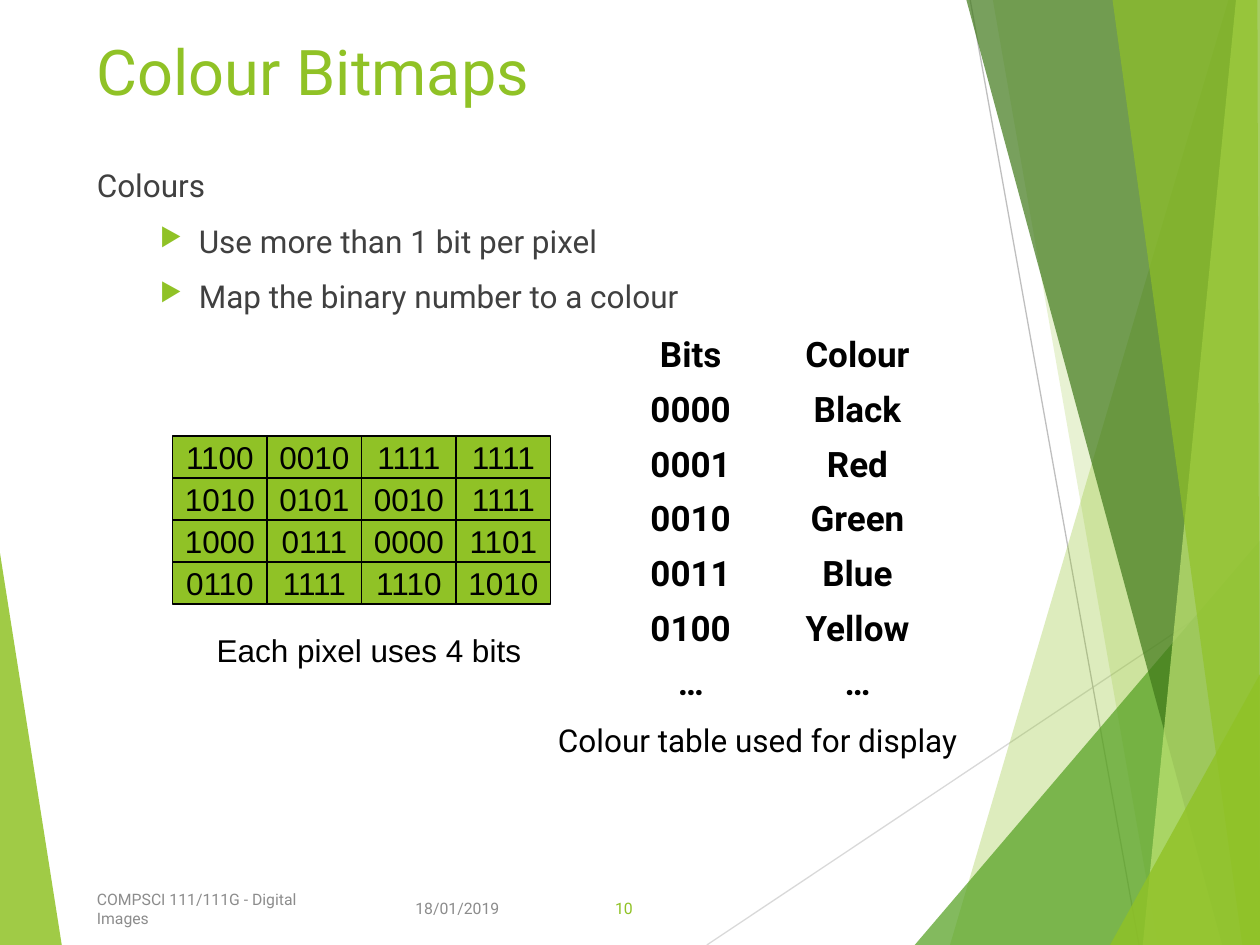
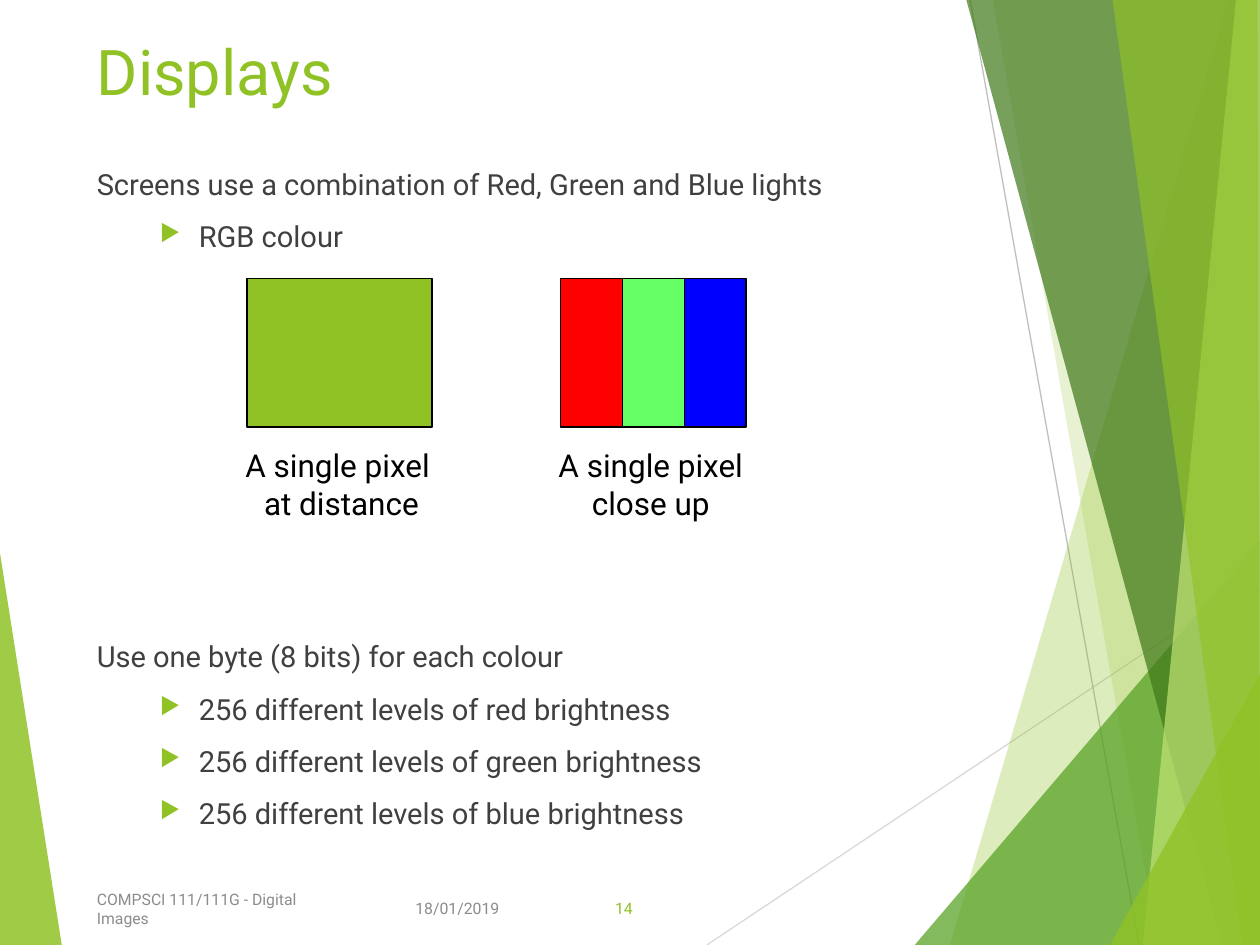
from lxml import etree
from pptx import Presentation
from pptx import util as u
from pptx.dml import color
from pptx.enum import shapes, text
from pptx.oxml import ns

COLUMNS, ROWS = 100, 75
CELL = u.Inches(0.1)

COLORS = {
    "lime": "90C226", "green": "54A021", "forest": "3F7819", "pale": "C0E474",
    "silver": "D9D9D9", "gray": "BFBFBF", "footer": "8C8C8C", "body": "404040",
    "black": "000000", "red": "FF0000", "light green": "66FF66", "blue": "0000FF",
}

# Background facets: colour, opacity in percent, corners as (column, row)
LEFT_FACET = ("lime", 85, [(0, 43.9), (4.9, 75), (0, 75)])
RIGHT_FACETS = [
    ("lime", 30, [(97.5, 0), (75.4, 75), (100, 75), (100, 0)]),
    ("lime", 20, [(78.8, 0), (91.9, 75), (100, 75), (100, 0)]),
    ("green", 72, [(72.6, 75), (100, 42.9), (100, 75)]),
    ("forest", 70, [(76.7, 0), (97, 75), (100, 75), (100, 0)]),
    ("pale", 70, [(98.1, 0), (90.7, 75), (100, 75), (100, 0)]),
    ("lime", 65, [(88.3, 0), (98.6, 75), (100, 75), (99.8, 0)]),
    ("lime", 80, [(88.1, 75), (100, 53.5), (100, 75)]),
]
RAYS = [("silver", (56.1, 75), (100, 45.7)), ("gray", (77, 0), (90.4, 75))]

MARGIN, BODY_WIDTH = 6.7, 69.4
FOOTER_TOP, FOOTER_HEIGHT = 70.1, 4


def grid(*lengths):
    return [int(length * CELL) for length in lengths]


def rgb(name):
    return color.RGBColor.from_string(COLORS[name])


class Painter:
    font = "Roboto"

    def __init__(self):
        self.deck = Presentation()
        self.deck.slide_width, self.deck.slide_height = grid(COLUMNS, ROWS)
        self.page = None

    def start(self, title, number):
        """Add a page with its facets, title and footer."""
        self.page = self.deck.slides.add_slide(self.deck.slide_layouts[6])
        self.facet(*LEFT_FACET)
        for ray in RAYS:
            self.line(*ray)
        for facet in RIGHT_FACETS:
            self.facet(*facet)
        self.label([title], MARGIN, 2.1, BODY_WIDTH, 9.1, size=36, tone="lime")
        for words, left, width, tone, align in [
            ("18/01/2019", 31.5, 9.1, "footer", "RIGHT"),
            ("COMPSCI 111/111G - Digital Images", MARGIN, 22.1, "footer", "LEFT"),
            (str(number), 43.4, 7.8, "lime", "RIGHT"),
        ]:
            self.label([words], left, FOOTER_TOP, width, FOOTER_HEIGHT,
                       size=9, tone=tone, align=align, anchor="MIDDLE")

    def style(self, para, size, tone="black", align="LEFT", bold=False, font=None):
        para.alignment = text.PP_ALIGN[align]
        para.font.name = font or self.font
        para.font.size = u.Pt(size)
        para.font.bold = bold
        para.font.color.rgb = rgb(tone)

    def facet(self, tone, opacity, corners):
        points = [grid(*corner) for corner in corners]
        builder = self.page.shapes.build_freeform(*points[0])
        builder.add_line_segments(points[1:], close=True)
        shape = builder.convert_to_shape()
        shape.shadow.inherit = False
        shape.line.fill.background()
        shape.fill.solid()
        shape.fill.fore_color.rgb = rgb(tone)
        fill = next(shape._element.spPr.iter(ns.qn("a:srgbClr")))
        etree.SubElement(fill, ns.qn("a:alpha"), val=str(opacity * 1000))

    def line(self, tone, start, end):
        connector = self.page.shapes.add_connector(
            shapes.MSO_CONNECTOR.STRAIGHT, *grid(*start, *end))
        connector.line.color.rgb = rgb(tone)
        connector.line.width = u.Pt(0.75)
        etree.SubElement(connector._element.spPr, ns.qn("a:effectLst"))

    def label(self, lines, left, top, width, height, size=18, tone="black",
              align="LEFT", anchor="TOP", wrap=True, font=None):
        box = self.page.shapes.add_textbox(*grid(left, top, width, height))
        frame = box.text_frame
        frame.word_wrap = wrap
        frame.vertical_anchor = text.MSO_ANCHOR[anchor]
        frame.text = "\n".join(lines)
        for para in frame.paragraphs:
            self.style(para, size, tone, align, font=font)
        return box

    def outline(self, heading, points, top, height, size):
        """Write a plain heading followed by indented arrow bullets."""
        box = self.label([heading, *points], MARGIN, top, BODY_WIDTH, height,
                         size, "body")
        for para in box.text_frame.paragraphs[1:]:
            para.space_before = u.Pt(10)
            para.level = 1
            props = para._p.get_or_add_pPr()
            props.set("marL", str(u.Inches(0.81)))
            props.set("indent", str(u.Inches(-0.31)))
            tint = etree.Element(ns.qn("a:buClr"))
            etree.SubElement(tint, ns.qn("a:srgbClr"), val=COLORS["lime"])
            scale = etree.Element(ns.qn("a:buSzPct"), val="80000")
            arrow = etree.Element(ns.qn("a:buChar"), char="▶")
            defaults = props.find(ns.qn("a:defRPr"))
            for part in (tint, scale, arrow):
                defaults.addprevious(part)

    def rectangle(self, left, top, width, height, tone, weight=0.75, words=""):
        shape = self.page.shapes.add_shape(
            shapes.MSO_SHAPE.RECTANGLE, *grid(left, top, width, height))
        shape.shadow.inherit = False
        shape.fill.solid()
        shape.fill.fore_color.rgb = rgb(tone)
        shape.line.color.rgb = rgb("black")
        shape.line.width = u.Pt(weight)
        if words:
            frame = shape.text_frame
            frame.word_wrap = False
            frame.vertical_anchor = text.MSO_ANCHOR.MIDDLE
            frame.text = words
            self.style(frame.paragraphs[0], 18, align="CENTER", font="Arial")

    def table(self, records, left, top, column_width, row_height):
        rows, columns = len(records), len(records[0])
        table = self.page.shapes.add_table(rows, columns, *grid(
            left, top, column_width * columns, row_height * rows)).table
        table.first_row = table.horz_banding = False
        for row, record in zip(table.rows, records):
            for cell, words in zip(row.cells, record):
                cell.fill.background()
                cell.text = words
                self.style(cell.text_frame.paragraphs[0], 20, align="CENTER", bold=True)


def colour_bitmaps(painter):
    painter.start("Colour Bitmaps", 10)
    painter.outline("Colours", ["Use more than 1 bit per pixel",
                                "Map the binary number to a colour"], 12.7, 50.8, 18)

    # Bitmap of four-bit pixels
    bitmap = ["1100 0010 1111 1111", "1010 0101 0010 1111",
              "1000 0111 0000 1101", "0110 1111 1110 1010"]
    width, height = 7.5, 3.33
    for row, pixels in enumerate(bitmap):
        for column, bits in enumerate(pixels.split()):
            painter.rectangle(13.7 + column * width, 34.6 + row * height,
                              width, height, "lime", 1, bits)
    painter.label(["Each pixel uses 4 bits"], 16.2, 49.6, 26.2, 4,
                  wrap=False, font="Arial")

    # Colour table
    painter.table([("Bits", "Colour"), ("0000", "Black"), ("0001", "Red"),
                   ("0010", "Green"), ("0011", "Blue"), ("0100", "Yellow"),
                   ("…", "…")], 48.2, 26.1, 13.24, 4.34)
    painter.label(["Colour table used for display"], 43.3, 56.7, 36.5, 4, wrap=False)


def displays(painter):
    painter.start("Displays", 14)
    painter.outline("Screens use a combination of Red, Green and Blue lights",
                    ["RGB colour"], 12.7, 8, 16.6)
    painter.outline("Use one byte (8 bits) for each colour",
                    [f"256 different levels of {name} brightness"
                     for name in ("red", "green", "blue")], 50.2, 17, 16.6)

    # One pixel from afar, and its three lights close up
    top, width, height = 22.1, 14.7, 11.8
    painter.rectangle(19.6, top, width, height, "lime")
    for index, tone in enumerate(("red", "light green", "blue")):
        painter.rectangle(44.5 + index * width / 3, top, width / 3, height, tone)
    for lines, left, span in [(["A single pixel ", "at distance"], 17.7, 18.8),
                              (["A single pixel", "close up"], 42.6, 18.1)]:
        painter.label(lines, left, 34.9, span, 7, align="CENTER", wrap=False)


def main():
    painter = Painter()
    colour_bitmaps(painter)
    displays(painter)
    painter.deck.save("out.pptx")


if __name__ == "__main__":
    main()
